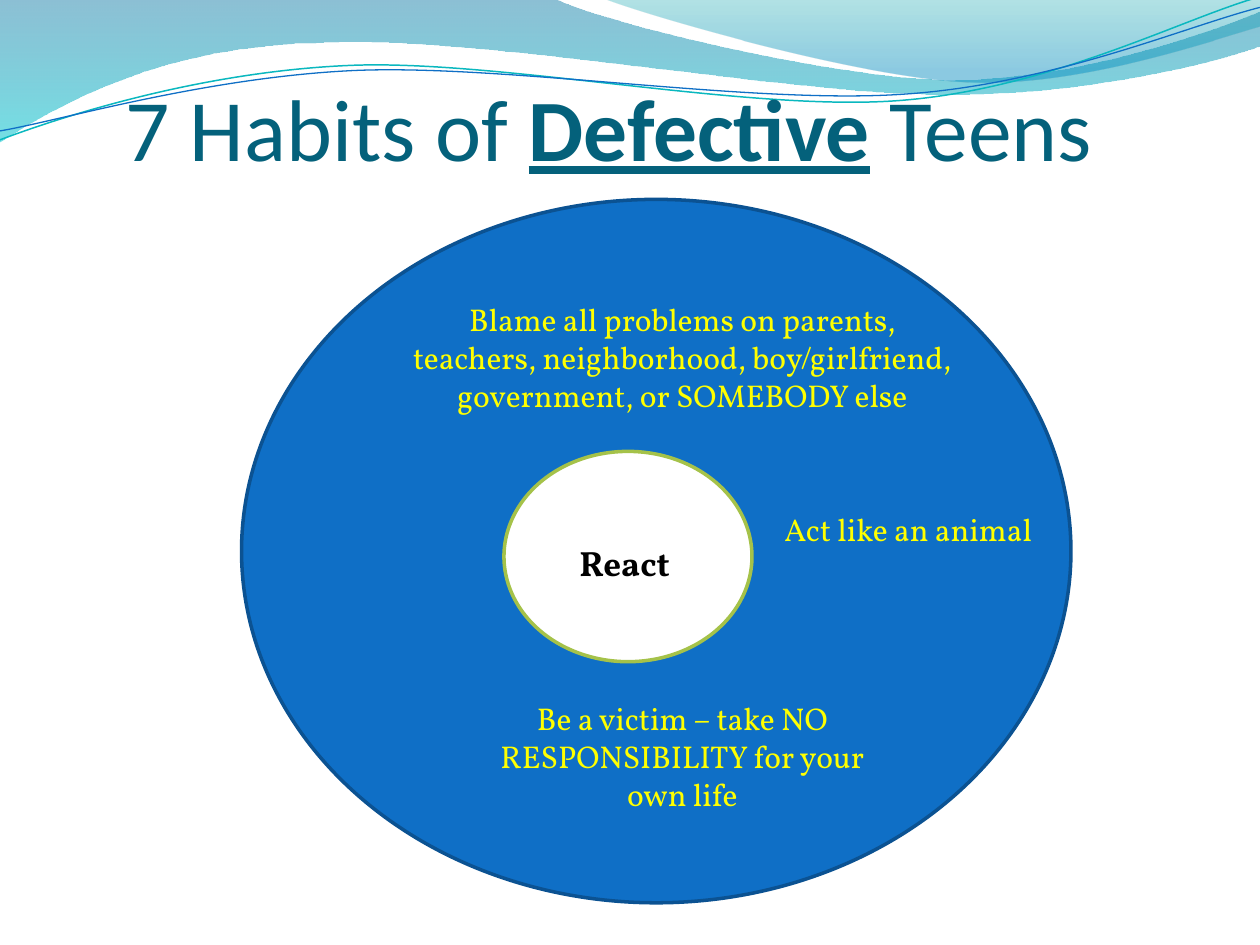
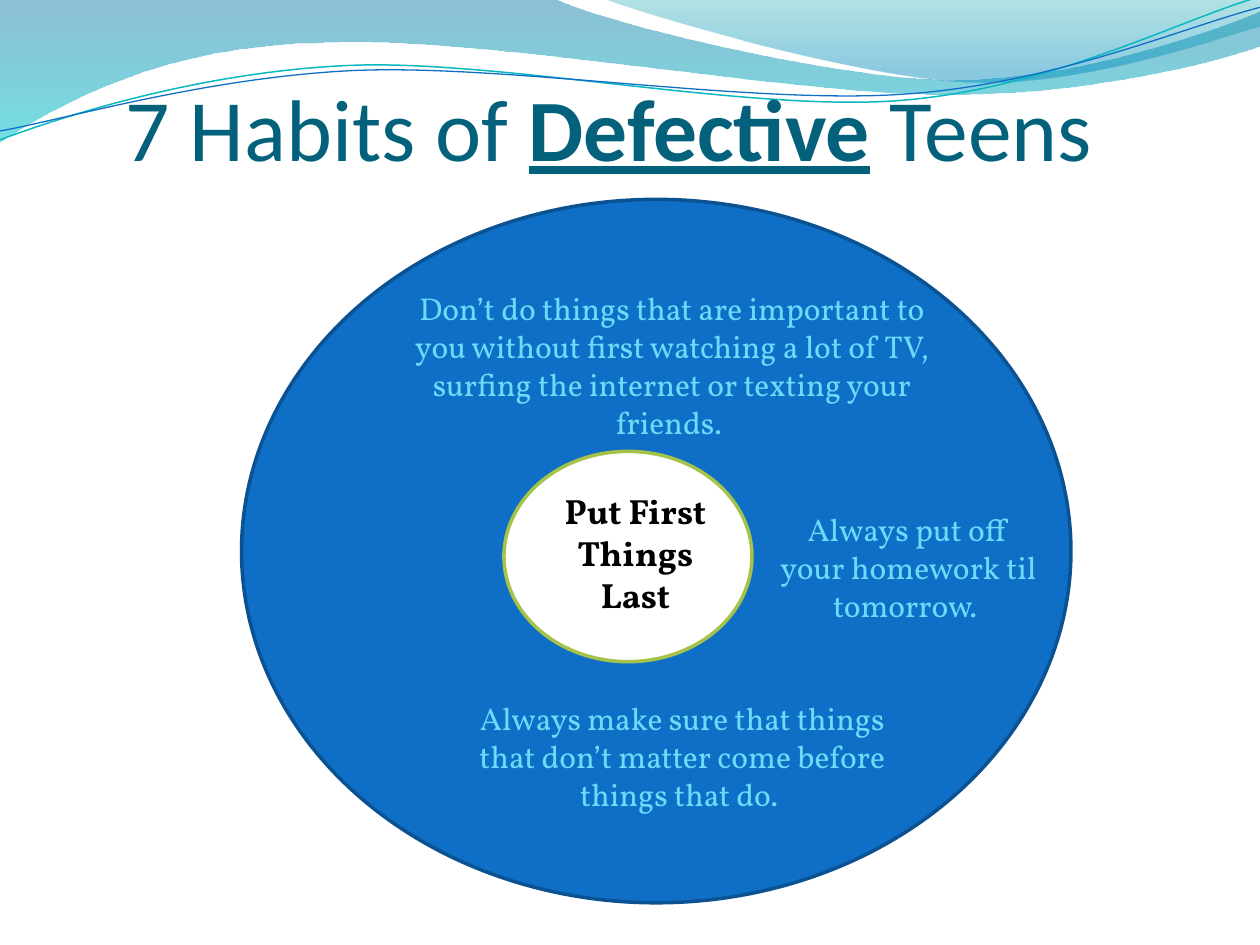
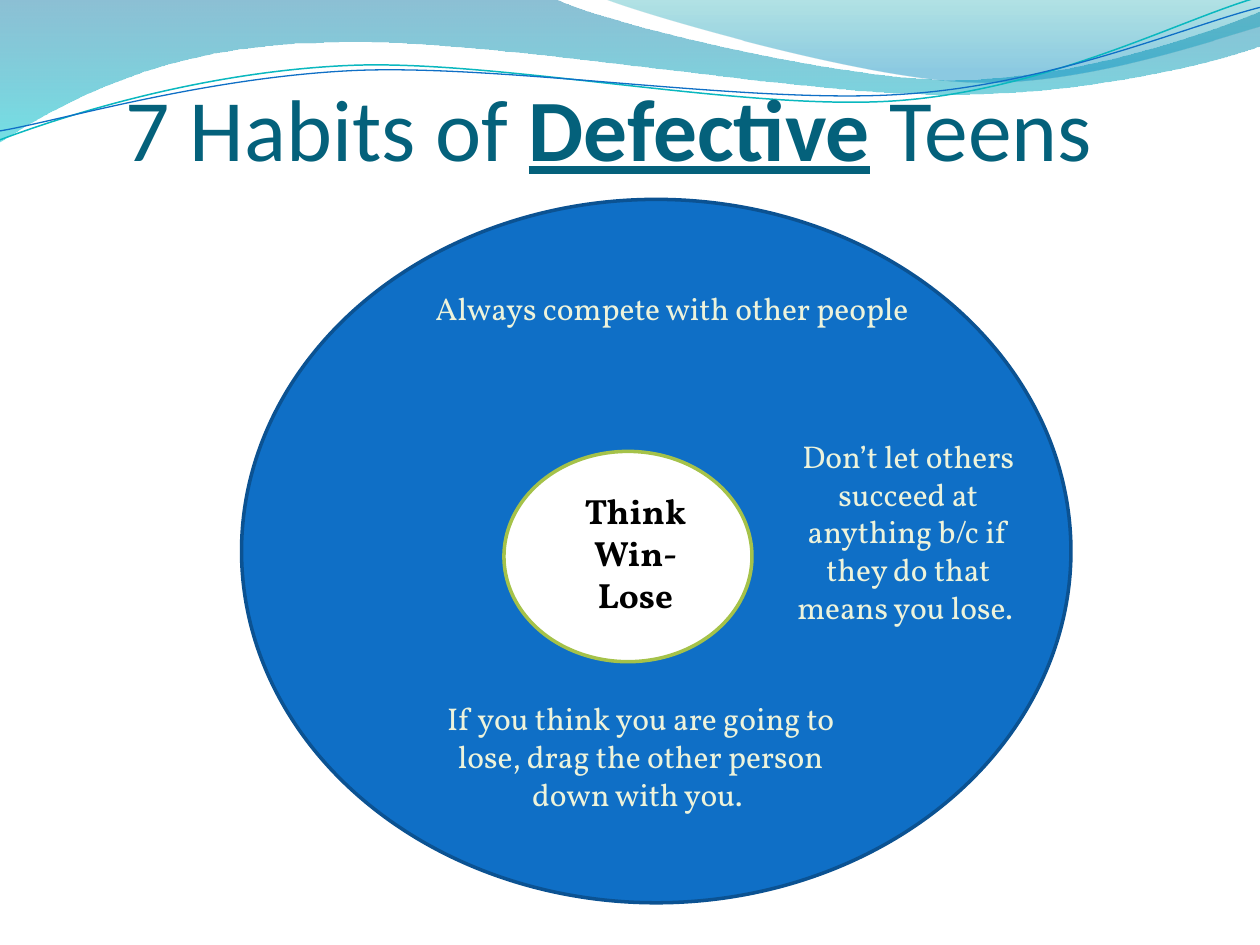
"""Build three slides on the habits of defective teens."""
import pptx
import pptx.dml.color
import pptx.enum.shapes
import pptx.enum.text
import pptx.oxml.ns
import pptx.util
from lxml import etree
from pptx.util import Cm

CENTER = pptx.enum.text.PP_ALIGN.CENTER
LEFT = pptx.enum.text.PP_ALIGN.LEFT
TITLE_FONT = {"name": "Calibri", "size": pptx.util.Pt(50)}
CORE_FONT = {"name": "Vollkorn", "size": pptx.util.Pt(20), "bold": True}
ADVICE_FONT = {"name": "Vollkorn", "size": pptx.util.Pt(18)}
TITLE_FRAME = {
    "word_wrap": True, "vertical_anchor": pptx.enum.text.MSO_ANCHOR.BOTTOM,
    "margin_left": 0, "margin_right": 0, "margin_bottom": 0,
}
GROWING_FRAME = {
    "word_wrap": True, "auto_size": pptx.enum.text.MSO_AUTO_SIZE.SHAPE_TO_FIT_TEXT,
}

waves = [
    {
        "start": (0, -0.03), "stops": [(0, "0074A1", 45), (1, "00C6CF", 55)],
        "segments": [
            [(11.18, -0.03)],
            [(12.09, 0.43), (16.87, 1.6), (19.25, 1.6)],
            [(21.67, 1.6), (24.33, 0.66), (25.4, 0.23)],
            [(25.43, 0.91)],
            [(24.97, 1.12), (22.1, 1.93), (18.95, 1.9)],
            [(15.8, 1.9), (9.7, 0.71), (6.53, 0.86)],
            [(3.28, 0.89), (1.17, 2.11), (-0.03, 2.87)],
        ],
    },
    {
        "start": (12.17, -0.03), "stops": [(0, "00A1A9", 30), (0.8, "008BBF", 45)],
        "segments": [
            [(12.93, 0.28), (17.32, 1.57), (19.53, 1.65)],
            [(21.74, 1.75), (24.41, 0.81), (25.4, 0.53)],
            [(25.4, 0)],
        ],
    },
    {
        "start": (0, 2.82), "line": ("0AB8BF", 0.85),
        "segments": [
            [(1.22, 2.36), (4.01, 1.45), (7.04, 1.32)],
            [(10.03, 1.19), (15.06, 2.26), (18.11, 2.03)],
            [(21.16, 1.8), (23.83, 0.38), (25.35, -0.05)],
        ],
    },
    {
        "start": (0, 2.64), "line": ("0F6FC6", 0.75),
        "segments": [
            [(1.19, 2.44), (4.17, 1.55), (7.19, 1.42)],
            [(10.24, 1.3), (15.16, 2.11), (18.21, 1.9)],
            [(21.23, 1.7), (23.9, 0.53), (25.4, 0.15)],
        ],
    },
]

rings = [
    ((4.87, 4.02, 16.72, 14.18), "0F6FC6", "0B5292"),
    ((10.16, 9.1, 5, 4.24), "FFFFFF", "A5C249"),
]

habits = [
    {
        "core": ("React", (11.43, 10.8, 2.74, 1.11), LEFT),
        "colour": "FFFF00",
        "advice": [
            ("Blame all problems on parents, teachers, neighborhood, boy/girlfriend, "
             "government, or SOMEBODY else", (8.04, 5.93, 11.43, 2.56)),
            ("Be a victim – take NO RESPONSIBILITY for your own life",
             (9.31, 13.97, 8.89, 2.56)),
            ("Act like an animal", (15.45, 10.16, 5.72, 1.03)),
        ],
    },
    {
        "core": ("Put First Things Last", (11.01, 9.74, 3.6, 2.82), CENTER),
        "colour": "6BDBFA",
        "advice": [
            ("Don’t do things that are important to you without first watching a lot "
             "of TV, surfing the internet or texting your friends. ",
             (7.83, 5.71, 11.43, 3.33)),
            ("Always make sure that things that don’t matter come before things that do. ",
             (9.31, 13.97, 8.89, 2.56)),
            ("Always put off your homework til tomorrow. ", (15.45, 10.16, 5.72, 2.56)),
        ],
    },
    {
        "core": ("Think Win-Lose", (11.01, 9.74, 3.6, 2.82), CENTER),
        "colour": "EDF3DB",
        "advice": [
            ("Always compete with other people", (7.83, 5.71, 11.43, 1.03)),
            ("If you think you are going to lose, drag the other person down with you. ",
             (8.47, 13.97, 8.89, 2.56)),
            ("Don’t let others succeed at anything b/c if they do that means you lose. ",
             (15.45, 8.68, 5.72, 4.1)),
        ],
    },
]


def colour(hex_value):
    return pptx.dml.color.RGBColor.from_string(hex_value)


def write(slide, box, runs, hex_value, frame_format, align=CENTER):
    frame = slide.shapes.add_textbox(*map(Cm, box)).text_frame
    for key, value in frame_format.items():
        setattr(frame, key, value)
    paragraph = frame.paragraphs[0]
    paragraph.alignment = align
    for words, font_format in runs:
        run = paragraph.add_run()
        run.text = words
        run.font.color.rgb = colour(hex_value)
        for key, value in font_format.items():
            setattr(run.font, key, value)


deck = pptx.Presentation()
deck.slide_width, deck.slide_height = Cm(25.4), Cm(19.05)

for habit in habits:
    slide = deck.slides.add_slide(deck.slide_layouts[6])

    for wave in waves:
        outline = [tuple(map(Cm, point)) for segment in wave["segments"] for point in segment]
        builder = slide.shapes.build_freeform(*map(Cm, wave["start"]))
        builder.add_line_segments(outline, close="stops" in wave)
        ribbon = builder.convert_to_shape()
        ribbon.shadow.inherit = False

        steps = ribbon._element.spPr.iter(pptx.oxml.ns.qn("a:lnTo"))
        steps = iter(list(steps))
        for segment in wave["segments"]:
            first, *others = [next(steps) for _ in segment]
            if others:
                first.addprevious(curve := etree.Element(pptx.oxml.ns.qn("a:cubicBezTo")))
                for step in (first, *others):
                    curve.append(step[0])
                    step.getparent().remove(step)

        if "line" in wave:
            line_colour, width = wave["line"]
            ribbon.fill.background()
            ribbon.line.color.rgb = colour(line_colour)
            ribbon.line.width = pptx.util.Pt(width)
            continue
        ribbon.line.fill.background()
        ribbon.fill.gradient()
        ribbon.fill.gradient_angle = 270
        for stop, (position, stop_colour, _) in zip(ribbon.fill.gradient_stops, wave["stops"]):
            stop.position = position
            stop.color.rgb = colour(stop_colour)
        tints = ribbon._element.spPr.iter(pptx.oxml.ns.qn("a:srgbClr"))
        for tint, (_, _, opacity) in zip(tints, wave["stops"]):
            etree.SubElement(tint, pptx.oxml.ns.qn("a:alpha"), val=str(opacity * 1000))

    write(slide, (1.9, 0.42, 20.75, 3.18), [
        ("7 Habits of ", TITLE_FONT),
        ("Defective", {**TITLE_FONT, "bold": True, "underline": True}),
        (" Teens", TITLE_FONT),
    ], "04617B", TITLE_FRAME)

    for box, fill_colour, edge_colour in rings:
        ring = slide.shapes.add_shape(pptx.enum.shapes.MSO_SHAPE.OVAL, *map(Cm, box))
        ring.shadow.inherit = False
        ring.fill.solid()
        ring.fill.fore_color.rgb = colour(fill_colour)
        ring.line.color.rgb = colour(edge_colour)
        ring.line.width = pptx.util.Pt(2)

    core, box, align = habit["core"]
    write(slide, box, [(core, CORE_FONT)], "000000", GROWING_FRAME, align)
    for advice, box in habit["advice"]:
        write(slide, box, [(advice, ADVICE_FONT)], habit["colour"], GROWING_FRAME)

deck.save("out.pptx")
